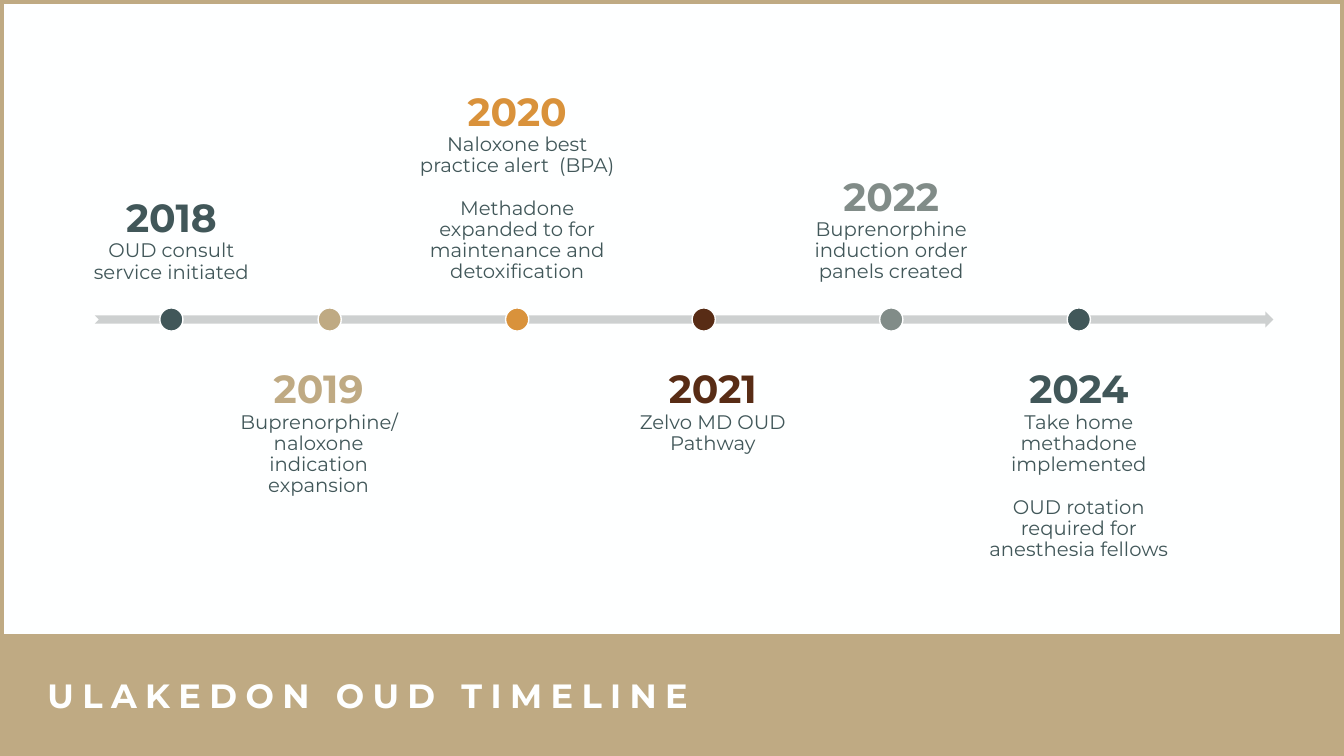
from dataclasses import dataclass

from pptx import Presentation
from pptx.dml.color import RGBColor
from pptx.enum.shapes import MSO_SHAPE
from pptx.enum.text import MSO_ANCHOR, PP_ALIGN
from pptx.util import Inches, Pt


@dataclass(frozen=True)
class Theme:
    font: str = "Montserrat"
    white: str = "FEFFFF"
    sand: str = "BFAA83"
    slate: str = "415759"
    orange: str = "D9923B"
    brown: str = "582C15"
    sage: str = "818C88"
    arrow: str = "CDD0D0"
    title_size: int = 24
    year_size: int = 28
    body_size: int = 14


theme = Theme()


def write(p, text, size, color, bold=False, align=PP_ALIGN.CENTER,
          before=0, leading=0.9, tracking=0):
    p.alignment, p.space_before, p.line_spacing = align, Pt(before), leading
    r = p.add_run()
    r.text = text
    r.font.name, r.font.size, r.font.bold = theme.font, Pt(size), bold
    r.font.color.rgb = RGBColor.from_string(color)
    if tracking:
        r._r.get_or_add_rPr().set("spc", str(tracking * 100))


def style(sp, fill, line=None, width=0):
    sp.shadow.inherit = False
    sp.fill.solid()
    sp.fill.fore_color.rgb = RGBColor.from_string(fill)
    if line:
        sp.line.color.rgb = RGBColor.from_string(line)
        sp.line.width = Pt(width)
    else:
        sp.line.fill.background()


prs = Presentation()
prs.slide_width, prs.slide_height = Inches(13.33), Inches(7.5)
s = prs.slides.add_slide(prs.slide_layouts[5])
s.background.fill.solid()
s.background.fill.fore_color.rgb = RGBColor.from_string(theme.white)

# Frame and title band
frame = s.shapes.add_shape(MSO_SHAPE.RECTANGLE, 0, 0, prs.slide_width, prs.slide_height)
style(frame, theme.white, theme.sand, 6)
band = s.shapes.add_shape(MSO_SHAPE.RECTANGLE, 0, Inches(6.29), prs.slide_width, Inches(1.21))
style(band, theme.sand)

# Title, brought in front of the band
title = s.shapes.title
s.shapes.element.append(title.element)
title.left, title.top = Inches(0.44), Inches(6.54)
title.width, title.height = Inches(8.89), Inches(0.71)
tf = title.text_frame
tf.word_wrap = True
tf.vertical_anchor = MSO_ANCHOR.MIDDLE
tf.margin_left = tf.margin_right = tf.margin_top = tf.margin_bottom = Inches(0.03)
write(tf.paragraphs[0], "ULAKEDON OUD TIMELINE", theme.title_size, theme.white,
      bold=True, align=PP_ALIGN.LEFT, leading=1.0, tracking=6)

# Timeline arrow with a notched tail
axis_y = 3.17
outline = [(0.94, -0.04), (12.55, -0.04), (12.55, -0.08), (12.63, 0),
           (12.55, 0.08), (12.55, 0.04), (0.94, 0.04), (0.98, 0)]
points = [(Inches(x), Inches(axis_y + dy)) for x, dy in outline]
builder = s.shapes.build_freeform(*points[0])
builder.add_line_segments(points[1:], close=True)
style(builder.convert_to_shape(), theme.arrow)

# Milestones: year, colour, dot centre, text centre, text width, body lines, paragraphs
milestones = [
    ("2018", theme.slate, 1.70, 1.70, 1.99, 2, ["OUD consult service initiated"]),
    ("2019", theme.sand, 3.27, 3.16, 2.08, 4,
     ["Buprenorphine/naloxone indication expansion"]),
    ("2020", theme.orange, 5.13, 5.13, 2.51, 7,
     ["Naloxone best practice alert  (BPA)",
      "Methadone expanded to for maintenance and detoxification"]),
    ("2021", theme.brown, 6.98, 7.07, 2.08, 2, ["Zelvo MD OUD Pathway"]),
    ("2022", theme.sage, 8.84, 8.84, 2.06, 3,
     ["Buprenorphine induction order panels created"]),
    ("2024", theme.slate, 10.70, 10.70, 2.49, 7,
     ["Take home methadone implemented",
      "OUD rotation required for anesthesia fellows"]),
]
above_bottom, below_top = 3.03, 3.45
dot = 0.23
blank_line = 15.4

for i, (year, color, dot_x, text_x, width, lines, body) in enumerate(milestones):
    # Text alternates above and below the arrow
    above = i % 2 == 0
    height = 0.87 + 0.21 * lines
    top = above_bottom - height if above else below_top
    box = s.shapes.add_textbox(Inches(text_x - width / 2), Inches(top),
                               Inches(width), Inches(height))
    tf = box.text_frame
    tf.word_wrap = True
    tf.vertical_anchor = MSO_ANCHOR.BOTTOM if above else MSO_ANCHOR.TOP
    tf.margin_left = tf.margin_right = tf.margin_top = tf.margin_bottom = Inches(0.22)
    write(tf.paragraphs[0], year, theme.year_size, color, bold=True, before=11)
    for n, text in enumerate(body):
        write(tf.add_paragraph(), text, theme.body_size, theme.slate,
              before=blank_line if n else 0)

    # Dot on the arrow
    sp = s.shapes.add_shape(MSO_SHAPE.OVAL, Inches(dot_x - dot / 2),
                            Inches(axis_y - dot / 2), Inches(dot), Inches(dot))
    style(sp, color, theme.white, 1)

prs.save("out.pptx")
